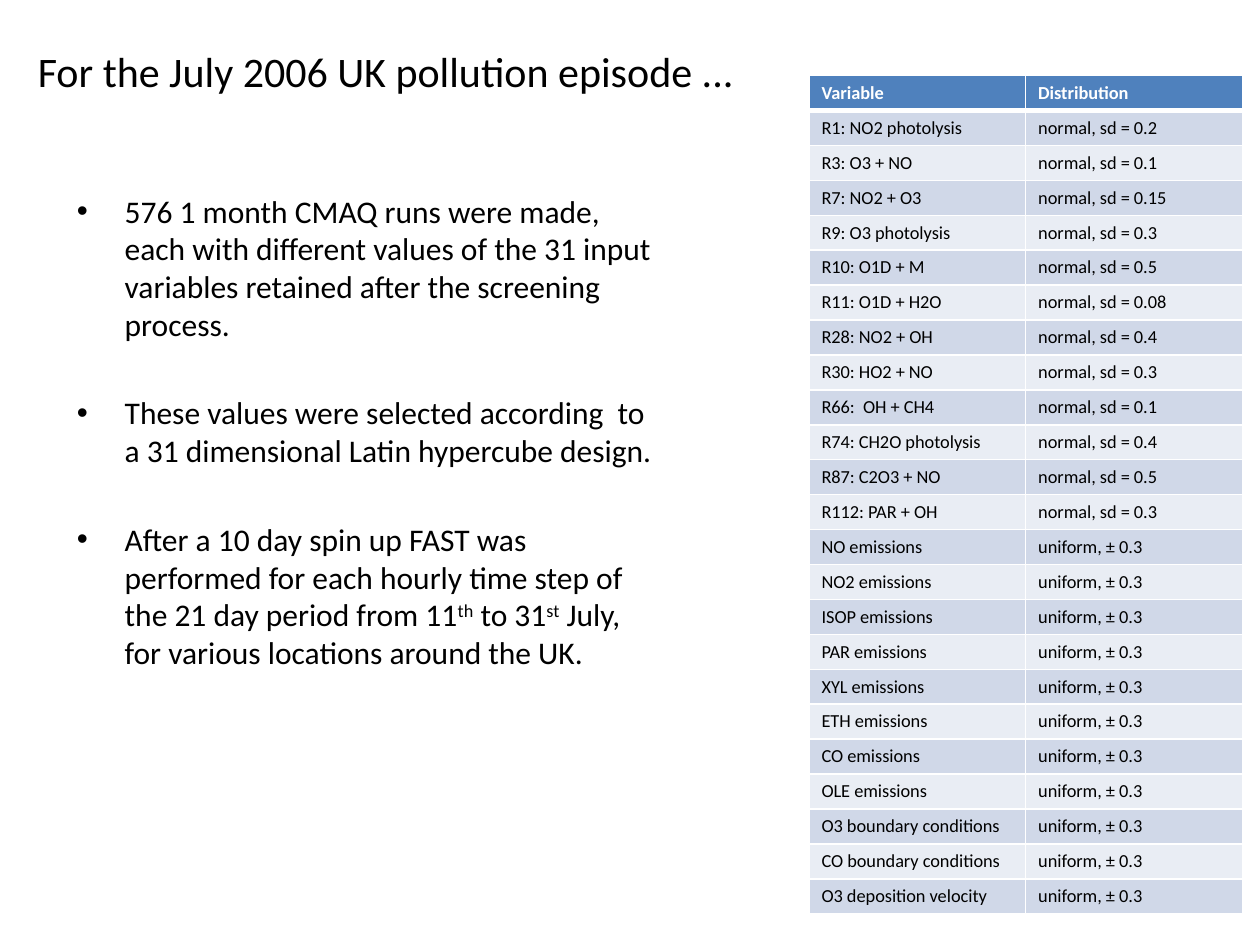
from lxml.etree import SubElement
from pptx import Presentation
from pptx.dml.color import RGBColor
from pptx.enum.text import MSO_ANCHOR, MSO_AUTO_SIZE, PP_ALIGN
from pptx.oxml.ns import qn
from pptx.util import Inches, Pt

FONT = "Calibri"
BLACK, WHITE, BLUE = "000000", "FFFFFF", "4F81BD"
BANDS = ("D0D8E8", "E9EDF4")
TITLE = "For the July 2006 UK pollution episode ..."
POINTS = [
    ["576 1 month CMAQ runs were made, each with different values of the 31 input "
     "variables retained after the screening process."],
    ["These values were selected according  to a 31 dimensional Latin hypercube design."],
    ["After a 10 day spin up FAST was performed for each hourly time step of the "
     "21 day period from 11", "th", " to 31", "st",
     " July, for various locations around the UK."],
]
REACTIONS = [
    ("R1: NO2 photolysis", "0.2"), ("R3: O3 + NO", "0.1"), ("R7: NO2 + O3", "0.15"),
    ("R9: O3 photolysis", "0.3"), ("R10: O1D + M", "0.5"), ("R11: O1D + H2O", "0.08"),
    ("R28: NO2 + OH", "0.4"), ("R30: HO2 + NO", "0.3"), ("R66:  OH + CH4", "0.1"),
    ("R74: CH2O photolysis", "0.4"), ("R87: C2O3 + NO", "0.5"), ("R112: PAR + OH", "0.3"),
]
EMISSIONS = ["NO", "NO2", "ISOP", "PAR", "XYL", "ETH", "CO", "OLE"]
CONDITIONS = ["O3 boundary conditions", "CO boundary conditions", "O3 deposition velocity"]


def colour(value):
    """Turn a hex string into a colour."""
    return RGBColor.from_string(value)


def add_run(para, text, size, hex_colour=BLACK, bold=False):
    """Append one formatted run to a paragraph and return it."""
    run = para.add_run()
    run.text = text
    run.font.name, run.font.size, run.font.bold = FONT, Pt(size), bold
    run.font.color.rgb = colour(hex_colour)
    return run


def place(holder, box, anchor):
    """Move a placeholder to a box and return its text frame."""
    holder.left, holder.top, holder.width, holder.height = map(Inches, box)
    frame = holder.text_frame
    frame.word_wrap, frame.auto_size = True, MSO_AUTO_SIZE.NONE
    frame.vertical_anchor = anchor
    return frame


def write_title(page, box):
    """Fill the title placeholder."""
    para = place(page.shapes.title, box, MSO_ANCHOR.MIDDLE).paragraphs[0]
    para.alignment = PP_ALIGN.LEFT
    add_run(para, TITLE, 24)


def write_points(page, box):
    """Fill the body placeholder with the bulleted points."""
    frame = place(page.placeholders[1], box, MSO_ANCHOR.TOP)
    for index, parts in enumerate(POINTS):
        para = frame.add_paragraph() if index else frame.paragraphs[0]
        para.space_before = Pt(29 if index else 0)
        properties = para._p.get_or_add_pPr()
        properties.set("marL", str(Inches(0.38)))
        properties.set("indent", str(-Inches(0.38)))
        SubElement(properties, qn("a:buChar"), char="•")
        for text in parts:
            run = add_run(para, text, 18)
            if text in ("th", "st"):
                run.font._element.set("baseline", "30000")


def set_borders(cell, widths):
    """Draw white borders of the given widths round a cell."""
    properties = cell._tc.get_or_add_tcPr()
    for index, (side, width) in enumerate(widths.items()):
        line = SubElement(properties, qn(f"a:ln{side}"), w=str(Pt(width)))
        properties.insert(index, line)
        fill = SubElement(line, qn("a:solidFill"))
        SubElement(fill, qn("a:srgbClr"), val=WHITE)


def add_variables(page, box):
    """Add the table of variables and their distributions."""
    rows = [("Variable", "Distribution")]
    rows += [(name, f"normal, sd = {spread}") for name, spread in REACTIONS]
    names = [f"{name} emissions" for name in EMISSIONS] + CONDITIONS
    rows += [(name, "uniform, ± 0.3") for name in names]
    table = page.shapes.add_table(len(rows), 2, *map(Inches, box)).table
    for number, texts in enumerate(rows):
        header = number == 0
        for column, text in enumerate(texts):
            cell = table.cell(number, column)
            cell.fill.solid()
            cell.fill.fore_color.rgb = colour(BLUE if header else BANDS[(number - 1) % 2])
            set_borders(cell, {"L": 1, "R": 1, "T": 3 if number == 1 else 1,
                               "B": 3 if header else 1})
            add_run(cell.text_frame.paragraphs[0], text, 10.5,
                    WHITE if header else BLACK, header)


def main():
    """Build and save the deck."""
    deck = Presentation()
    deck.slide_width, deck.slide_height = Inches(10), Inches(7.5)
    page = deck.slides.add_slide(deck.slide_layouts[1])
    write_title(page, (0.2, 0.21, 5.76, 0.71))
    write_points(page, (0.51, 1.47, 4.81, 4.95))
    add_variables(page, (6.42, 0.6, 3.44, 6.6))
    deck.save("out.pptx")


if __name__ == "__main__":
    main()
